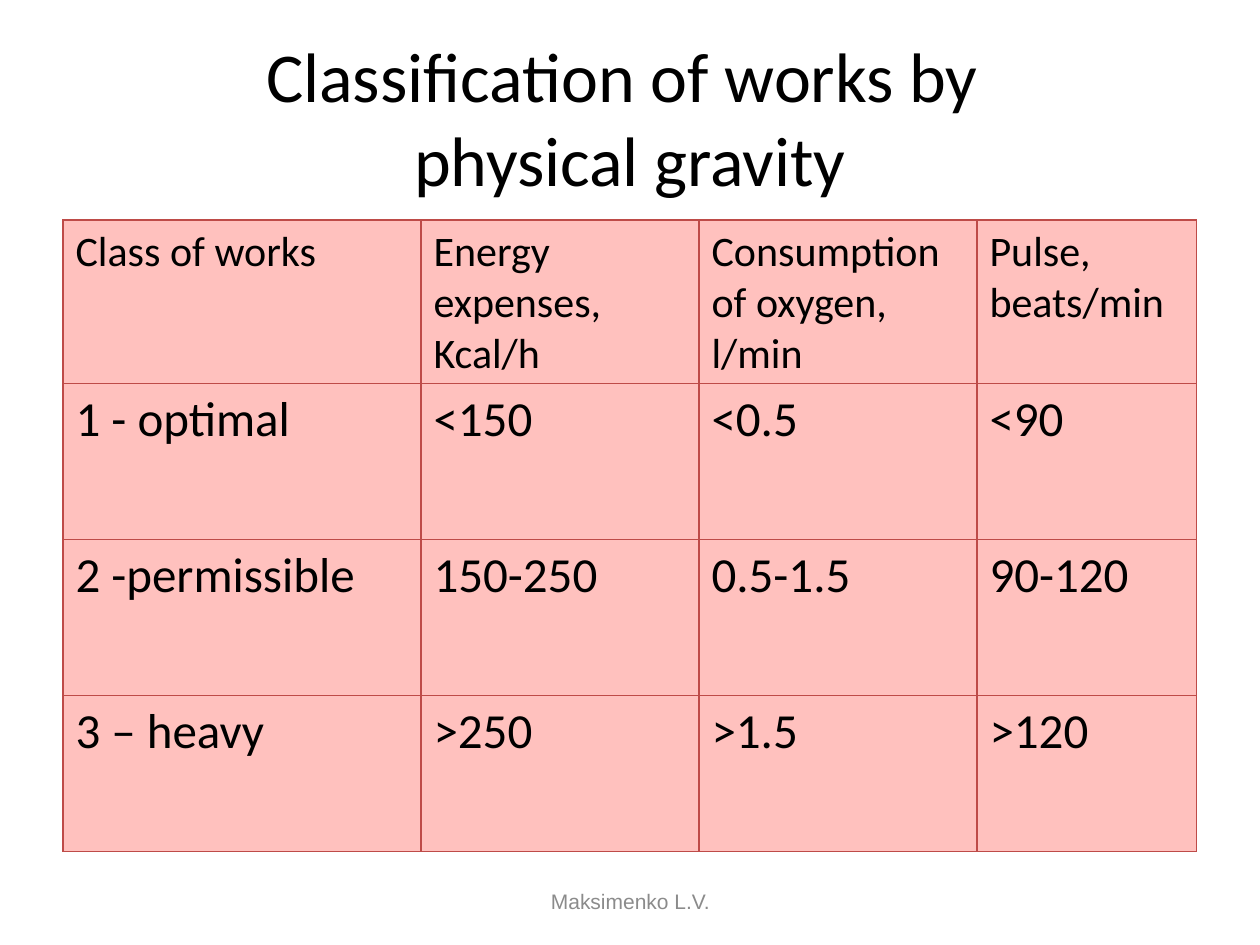
from dataclasses import dataclass

import lxml.etree
import pptx
import pptx.dml.color
import pptx.enum.text
import pptx.oxml.ns
import pptx.util

PX = 914400 / 126  # EMU per pixel
BLACK, GREY, PINK, RED = "000000", "8B8B8B", "FFC1BE", "BE4B48"
BORDER_WIDTH = 0.75


@dataclass
class Label:
    text: str
    left: int
    top: int
    width: int
    height: int
    font: str
    size: int
    color: str


# A vertical tab is a line break within the paragraph
LABELS = [
    Label("Classification of works by \vphysical gravity", 63, 38, 1134, 157, "Calibri", 40, BLACK),
    Label("Maksimenko L.V.", 431, 876, 399, 50, "Arial", 12, GREY),
]

TABLE_LEFT, TABLE_TOP, ROW_HEIGHT = 63, 220, 156
COLUMN_WIDTHS = [358, 278, 278, 220]
ROWS = [
    ["Class of works", "Energy expenses, Kcal/h", "Consumption of oxygen, l/min", "Pulse, beats/min"],
    ["1 - optimal", "<150", "<0.5", "<90"],
    ["2 -permissible", "150-250", "0.5-1.5", "90-120"],
    ["3 – heavy", ">250", ">1.5", ">120"],
]


def px(length: int) -> int:
    return round(length * PX)


def rgb(color: str) -> pptx.dml.color.RGBColor:
    return pptx.dml.color.RGBColor.from_string(color)


def style_paragraph(paragraph, font: str, size: int, color: str) -> None:
    paragraph.font.name = font
    paragraph.font.size = pptx.util.Pt(size)
    paragraph.font.bold = False
    paragraph.font.color.rgb = rgb(color)


def add_label(slide, label: Label) -> None:
    box = slide.shapes.add_textbox(px(label.left), px(label.top), px(label.width), px(label.height))
    frame = box.text_frame
    frame.word_wrap = True
    frame.vertical_anchor = pptx.enum.text.MSO_ANCHOR.MIDDLE
    paragraph = frame.paragraphs[0]
    paragraph.text = label.text
    paragraph.alignment = pptx.enum.text.PP_ALIGN.CENTER
    style_paragraph(paragraph, label.font, label.size, label.color)


def set_borders(cell, color: str) -> None:
    """Line all four sides; the lines must come before the cell's fill."""
    properties = cell._tc.get_or_add_tcPr()
    qn = pptx.oxml.ns.qn
    for position, side in enumerate(("lnL", "lnR", "lnT", "lnB")):
        line = lxml.etree.Element(qn(f"a:{side}"), w=str(pptx.util.Pt(BORDER_WIDTH)))
        fill = lxml.etree.SubElement(line, qn("a:solidFill"))
        lxml.etree.SubElement(fill, qn("a:srgbClr"), val=color)
        properties.insert(position, line)


def fill_cell(cell, text: str, size: int) -> None:
    cell.fill.solid()
    cell.fill.fore_color.rgb = rgb(PINK)
    set_borders(cell, RED)
    paragraph = cell.text_frame.paragraphs[0]
    paragraph.text = text
    paragraph.space_before = pptx.util.Pt(size * 0.2)
    style_paragraph(paragraph, "Calibri", size, BLACK)


def add_works_table(slide) -> None:
    table = slide.shapes.add_table(
        len(ROWS), len(COLUMN_WIDTHS), px(TABLE_LEFT), px(TABLE_TOP),
        px(sum(COLUMN_WIDTHS)), px(ROW_HEIGHT * len(ROWS)),
    ).table
    for column, width in zip(table.columns, COLUMN_WIDTHS):
        column.width = px(width)
    for row_index, texts in enumerate(ROWS):
        table.rows[row_index].height = px(ROW_HEIGHT)
        for column_index, text in enumerate(texts):
            fill_cell(table.cell(row_index, column_index), text, 28 if row_index else 24)


def main() -> None:
    presentation = pptx.Presentation()
    presentation.slide_width = px(1260)
    presentation.slide_height = px(945)
    slide = presentation.slides.add_slide(presentation.slide_layouts[6])

    # Title, table, footer
    title, footer = LABELS
    add_label(slide, title)
    add_works_table(slide)
    add_label(slide, footer)

    presentation.save("out.pptx")


if __name__ == "__main__":
    main()
